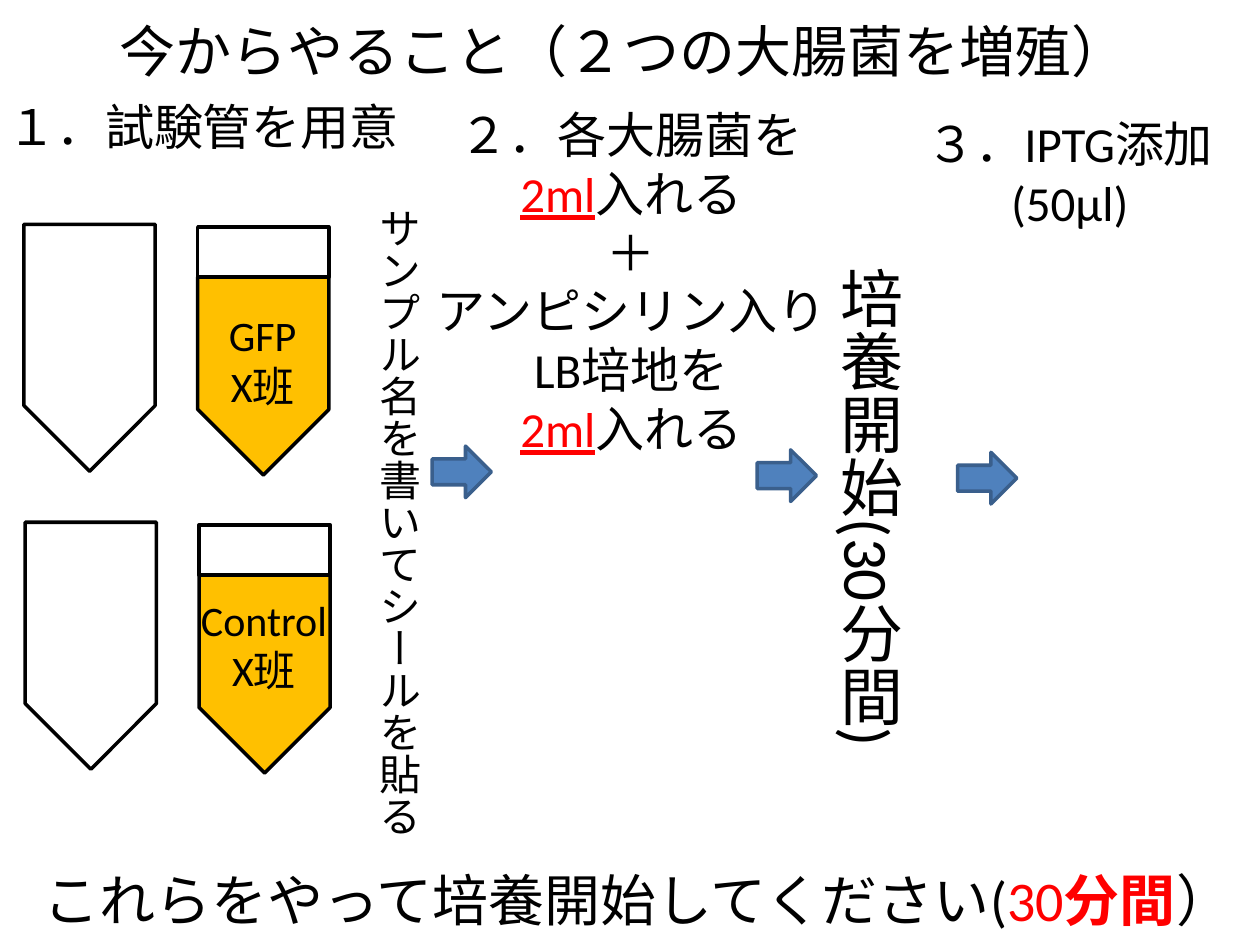
from pptx import Presentation
from pptx.dml.color import RGBColor
from pptx.enum.shapes import MSO_SHAPE
from pptx.enum.text import MSO_AUTO_SIZE, PP_ALIGN
from pptx.util import Inches, Pt

CENTER, LEFT = PP_ALIGN.CENTER, PP_ALIGN.LEFT
FIT_SHAPE = MSO_AUTO_SIZE.SHAPE_TO_FIT_TEXT
ARROW, PLATE, RECTANGLE = MSO_SHAPE.RIGHT_ARROW, MSO_SHAPE.PENTAGON, MSO_SHAPE.RECTANGLE
COLORS = {"text": "000000", "accent": "FF0000", "arrow": "4F81BD",
          "arrow_edge": "3A5F8C", "liquid": "FFC000"}
FONT = "Calibri"
COLUMNS, ROWS = 100, 75
SLIDE_WIDTH, SLIDE_HEIGHT = Inches(10), Inches(7.5)
BREAK = "\n"
ADD_2ML = [("2ml", {"color": "accent", "underline": True}), ("入れる", {})]


def grid(box):
    """Turn a box in columns and rows into slide lengths."""
    left, top, width, height = box
    column, row = SLIDE_WIDTH / COLUMNS, SLIDE_HEIGHT / ROWS
    return [round(left * column), round(top * row), round(width * column), round(height * row)]


def add_text(slide, box, paragraphs, size, align=CENTER, vertical=False):
    """Place a text box whose paragraphs are lists of (text, style) runs."""
    shape = slide.shapes.add_textbox(*grid(box))
    frame = shape.text_frame
    frame.word_wrap = not vertical
    frame.auto_size = FIT_SHAPE
    if vertical:
        shape.element.txBody.bodyPr.set("vert", "eaVert")
    for index, runs in enumerate(paragraphs):
        paragraph = frame.paragraphs[0] if index == 0 else frame.add_paragraph()
        paragraph.alignment = align
        for text, style in runs:
            if text == BREAK:
                paragraph.add_line_break()
                continue
            run = paragraph.add_run()
            run.text = text
            run.font.name, run.font.size = FONT, Pt(size)
            run.font.bold = style.get("bold")
            run.font.underline = style.get("underline")
            run.font.color.rgb = RGBColor.from_string(COLORS[style.get("color", "text")])


def add_outline(shapes, kind, box, fill=None, edge="text"):
    """Place a preset shape with a two-point outline and an optional fill."""
    shape = shapes.add_shape(kind, *grid(box))
    shape.shadow.inherit = False
    if fill:
        shape.fill.solid()
        shape.fill.fore_color.rgb = RGBColor.from_string(COLORS[fill])
    else:
        shape.fill.background()
    shape.line.color.rgb = RGBColor.from_string(COLORS[edge])
    shape.line.width = Pt(2)
    return shape


def add_plate(shapes, box, fill=None):
    """Place a tube body that points down and fills the upright box."""
    left, top, width, height = box
    shift = (height - width) / 2
    plate = add_outline(shapes, PLATE, (left - shift, top + shift, height, width), fill)
    plate.rotation = 90


def add_tube_pair(slide, box):
    """Draw an empty tube and a partly filled tube as one group."""
    left, top, width, height = box
    tube_width = 0.43 * width
    filled_left = left + width - tube_width
    liquid_height = 0.79 * height
    shapes = slide.shapes.add_group_shape().shapes
    add_plate(shapes, (filled_left, top + height - liquid_height, tube_width, liquid_height),
              "liquid")
    add_outline(shapes, RECTANGLE, (filled_left, top + 0.01 * height, tube_width, 0.2 * height))
    add_plate(shapes, (left, top, tube_width, 0.985 * height))


def add_preparation(slide, box):
    """Build step one: its heading, both tube pairs and the label note."""
    left, top, width, height = box
    add_text(slide, (left, top, width, 5.7), [[("１．試験管を用意", {})]], 28, LEFT)
    add_text(slide, (left + 28.5, top + 8.3, 6.1, 48.3),
             [[("サンプル名を書いてシールを貼る", {})]], 24, LEFT, vertical=True)
    samples = [("GFP", 10.3, 6.3), ("Control", 12.4, 5.2)]
    for index, (name, label_width, label_drop) in enumerate(samples):
        pair_left = left + 2.3 + 0.1 * index
        pair_top = top + 10.6 + 23.65 * index
        add_tube_pair(slide, (pair_left, pair_top, 24.2, 19.9))
        add_text(slide, (pair_left + 18.95 - label_width / 2, pair_top + label_drop,
                         label_width, 9.1), [[(name, {})], [("X班", {})]], 24)


def add_mixing(slide, box):
    """Build step two: the bacteria and the medium to add."""
    add_text(slide, box, [
        [("２．各大腸菌を", {}), (BREAK, {})] + ADD_2ML,
        [("＋", {})],
        [("アンピシリン入り", {})],
        [("LB培地を", {})],
        ADD_2ML,
    ], 28)


def add_arrows(slide, corners):
    """Place the arrows between the steps."""
    for left, top in corners:
        add_outline(slide.shapes, ARROW, (left, top, 4.7, 4.1), "arrow", "arrow_edge")


def main():
    """Build the slide and save it."""
    presentation = Presentation()
    presentation.slide_width, presentation.slide_height = SLIDE_WIDTH, SLIDE_HEIGHT
    slide = presentation.slides.add_slide(presentation.slide_layouts[6])
    add_text(slide, (0.1, 0.8, 98.8, 6.4), [[("今からやること（２つの大腸菌を増殖）", {})]], 32)
    add_preparation(slide, (-0.4, 7.2, 34.6, 57))
    add_mixing(slide, (33.6, 7.8, 33, 29.3))
    add_text(slide, (64.3, 20.2, 8.2, 40.2), [[("培養開始(30分間)", {})]], 36, LEFT, vertical=True)
    add_text(slide, (68.4, 8.5, 33, 10.4), [[("３．IPTG添加", {})], [("(50μl)", {})]], 28)
    add_arrows(slide, [(34.3, 35.4), (60.1, 35.7), (76, 35.9)])
    add_text(slide, (1.2, 68.2, 98.8, 6.4), [[
        ("これらをやって培養開始してください(", {}),
        ("30", {"color": "accent"}),
        ("分間", {"color": "accent", "bold": True}),
        ("）", {}),
    ]], 32)
    presentation.save("out.pptx")


if __name__ == "__main__":
    main()
